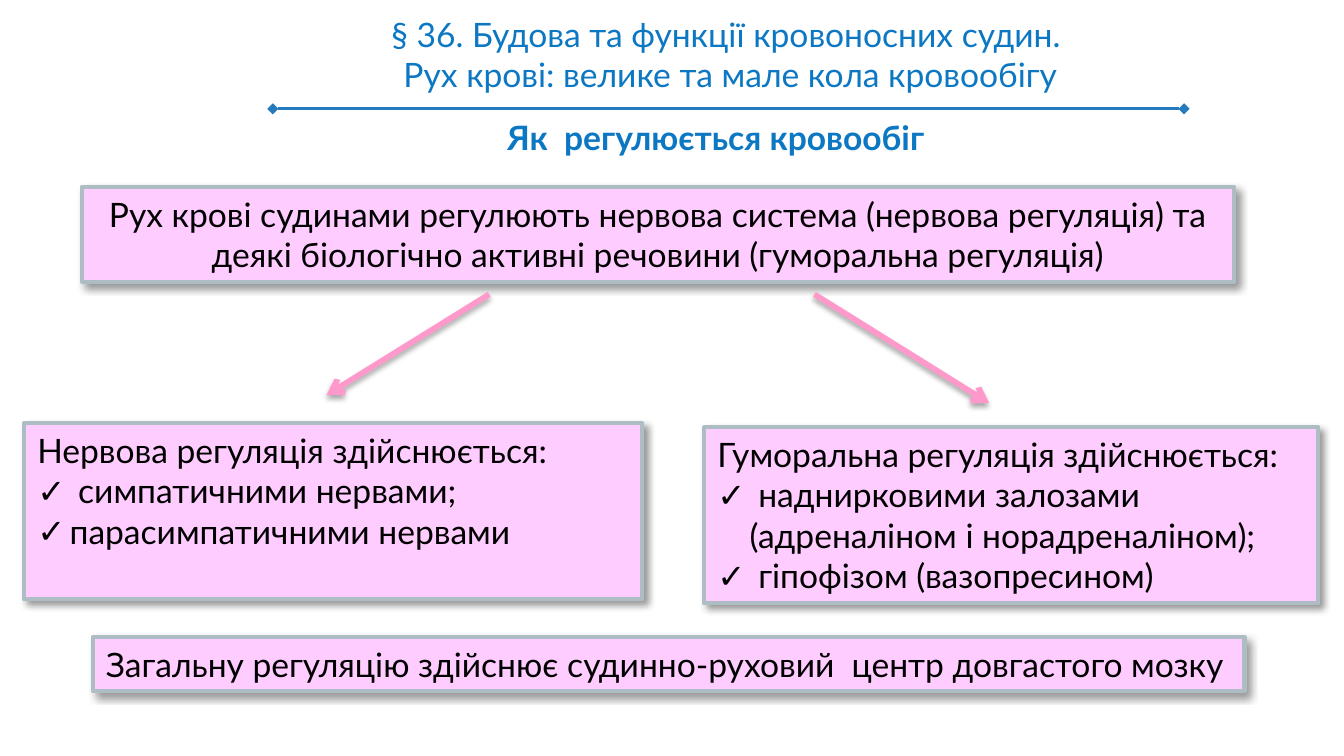
from lxml import etree
from pptx import Presentation
from pptx.dml.color import RGBColor
from pptx.enum import shapes, text
from pptx.oxml import ns
from pptx.util import Inches, Pt

LEFT, MID, JUST = text.PP_ALIGN.LEFT, text.PP_ALIGN.CENTER, text.PP_ALIGN.JUSTIFY
BLUE, PINK, FACE = "0C77C3", "FFCCFF", "Lato"


def tint(code):
    return RGBColor.from_string(code)


def sub(node, tag, **attrs):
    return etree.SubElement(node, ns.qn("a:" + tag), {k: str(v) for k, v in attrs.items()})


def shade(item, alpha=0, blur=0, dist=0, angle=0):
    fx = sub(item.element.spPr, "effectLst")
    if alpha:
        drop = sub(fx, "outerShdw", blurRad=Pt(blur), dist=Pt(dist),
                   dir=angle * 60000, rotWithShape=0)
        ink = sub(drop, "srgbClr", val="000000")
        sub(ink, "alpha", val=alpha * 1000)


def check(para):
    props = para._p.get_or_add_pPr()
    props.set("marL", str(Inches(0.24)))
    props.set("indent", str(-Inches(0.24)))
    color = sub(props, "buClr")
    sub(color, "srgbClr", val="000000")
    sub(props, "buFont", typeface=FACE)
    sub(props, "buChar", char="✓")


def write(item, lines, color="000000", align=MID, bold=False, pad=0.1, ticks=False):
    frame = item.text_frame
    frame.word_wrap = True
    frame.vertical_anchor = text.MSO_ANCHOR.TOP
    frame.margin_left = frame.margin_right = Inches(0.1)
    frame.margin_top = frame.margin_bottom = Inches(pad)
    for i, line in enumerate(lines):
        para = frame.paragraphs[0] if i == 0 else frame.add_paragraph()
        para.alignment = align
        if ticks and i:
            check(para)
        run = para.add_run()
        run.text = line
        font = run.font
        font.name, font.size, font.bold = FACE, Pt(18), bold
        font.color.rgb = tint(color)


def label(slide, box, lines, **form):
    item = slide.shapes.add_textbox(*map(Inches, box))
    write(item, lines, color=BLUE, **form)


def card(slide, box, lines, **form):
    item = slide.shapes.add_shape(shapes.MSO_SHAPE.RECTANGLE, *map(Inches, box))
    item.fill.solid()
    item.fill.fore_color.rgb = tint(PINK)
    item.line.color.rgb = tint("AEBCC4")
    item.line.width = Pt(2.25)
    shade(item, 40, 4, 3, 45)
    write(item, lines, pad=0.05, **form)


def link(slide, start, end, color, width, tail, head=None, **drop):
    item = slide.shapes.add_connector(shapes.MSO_CONNECTOR.STRAIGHT,
                                      *map(Inches, start + end))
    item.line.color.rgb = tint(color)
    item.line.width = Pt(width)
    edge = item.line._get_or_add_ln()
    if head:
        sub(edge, "headEnd", type=head)
    sub(edge, "tailEnd", type=tail)
    shade(item, **drop)


def header(slide, x, y, w):
    label(slide, (x, y, w, 0.81), [
        "§ 36. Будова та функції кровоносних судин. ",
        "Рух крові: велике та мале кола кровообігу"])
    link(slide, (x + 0.32, y + 0.81), (x + 7.1, y + 0.81), "257BBE", 1.5,
         "diamond", head="diamond")
    label(slide, (x + 0.58, y + 0.77, 6.07, 0.5),
          ["Як  регулюється кровообіг"], bold=True)


def scheme(slide, x, y):
    card(slide, (x + 0.43, y, 8.57, 0.71), [
        "Рух крові судинами регулюють нервова система (нервова регуляція) "
        "та деякі біологічно активні речовини (гуморальна регуляція)"])
    card(slide, (x, y + 1.76, 4.6, 1.31), [
        "Нервова регуляція здійснюється:",
        " симпатичними нервами;",
        "парасимпатичними нервами"], align=JUST, ticks=True)
    card(slide, (x + 5.06, y + 1.79, 4.57, 1.31), [
        "Гуморальна регуляція здійснюється:",
        " наднирковими залозами (адреналіном і норадреналіном);",
        " гіпофізом (вазопресином)"], align=LEFT, ticks=True)
    card(slide, (x + 0.51, y + 3.35, 8.57, 0.4), [
        "Загальну регуляцію здійснює судинно-руховий  центр довгастого мозку"],
        align=JUST)
    for start, end in (((3.46, 0.8), (2.25, 1.55)), ((5.88, 0.8), (7.18, 1.61))):
        link(slide, (x + start[0], y + start[1]), (x + end[0], y + end[1]),
             "FF99CC", 3, "arrow", alpha=35, blur=3.1, dist=1.8, angle=90)


def main():
    deck = Presentation()
    deck.slide_width = Inches(10)
    deck.slide_height = deck.slide_width * 9 // 16
    slide = deck.slides.add_slide(deck.slide_layouts[6])
    header(slide, 1.71, 0, 7.45)
    scheme(slide, 0.18, 1.39)
    deck.save("out.pptx")


if __name__ == "__main__":
    main()
